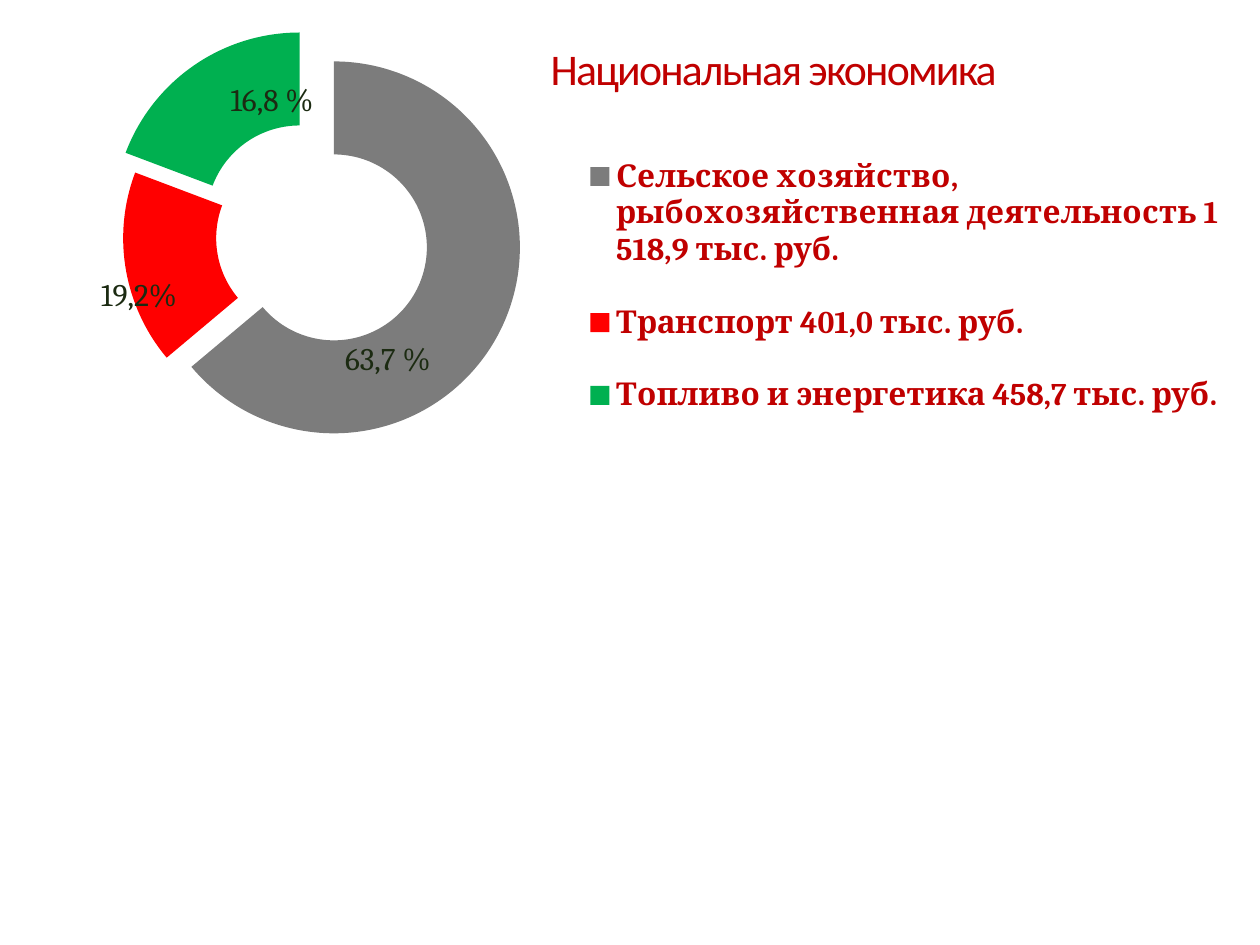
import pptx
import pptx.chart.data
import pptx.dml.color
import pptx.enum.chart
import pptx.enum.text
import pptx.util
from lxml import etree
from pptx.util import Inches

FONT = "Cambria"
TITLE_COLOR = "C00000"
LABEL_COLOR = "1C2B12"
CHART_SPACE = "{http://schemas.openxmlformats.org/drawingml/2006/chart}"

# category, share, slice colour, explosion, label text, label shift as part of chart size
SECTORS = [
    ("Сельское хозяйство, рыбохозяйственная деятельность 1 518,9 тыс. руб.",
     0.637, "7C7C7C", 25, "63,7 %", (-0.06, 0.11)),
    ("Транспорт 401,0 тыс. руб.", 0.168, "FF0000", 4, "19,2%", (-0.027, 0.07)),
    ("Топливо и энергетика 458,7 тыс. руб.", 0.192, "00B050", 25, "16,8 %", (0.043, -0.006)),
]


def rgb(value):
    return pptx.dml.color.RGBColor.from_string(value)


def manual_layout(**values):
    """Build a c:layout element whose children hold the given values."""
    layout = etree.Element(CHART_SPACE + "layout")
    manual = etree.SubElement(layout, CHART_SPACE + "manualLayout")
    for name, value in values.items():
        etree.SubElement(manual, CHART_SPACE + name).set("val", str(value))
    return layout


deck = pptx.Presentation()
deck.slide_width, deck.slide_height = Inches(10), Inches(7.5)
page = deck.slides.add_slide(deck.slide_layouts[5])

# Title
title = page.shapes.title
title.left, title.top = Inches(4.27), Inches(0.13)
title.width, title.height = Inches(5.53), Inches(0.67)
title.text_frame.vertical_anchor = pptx.enum.text.MSO_ANCHOR.BOTTOM
para = title.text_frame.paragraphs[0]
para.alignment = pptx.enum.text.PP_ALIGN.LEFT
para.line_spacing = 0.9
span = para.add_run()
span.text = "Национальная экономика"
for name, value in {"size": pptx.util.Pt(25), "name": "Calibri"}.items():
    setattr(span.font, name, value)
span.font.color.rgb = rgb(TITLE_COLOR)
span.font._element.set("spc", "-100")

# Doughnut chart
data = pptx.chart.data.CategoryChartData(number_format="0.0%")
data.categories = [sector[0] for sector in SECTORS]
data.add_series("Series 1", [sector[1] for sector in SECTORS])
chart = page.shapes.add_chart(
    pptx.enum.chart.XL_CHART_TYPE.DOUGHNUT,
    Inches(0.43), Inches(0.02), Inches(9.57), Inches(3.88), data).chart
chart.has_title = False
chart.has_legend = True
legend = chart.legend
legend.position = pptx.enum.chart.XL_LEGEND_POSITION.RIGHT
legend.include_in_layout = False
for font, color, bold in ((chart.font, LABEL_COLOR, False), (legend.font, TITLE_COLOR, True)):
    for name, value in {"name": FONT, "size": pptx.util.Pt(18), "bold": bold}.items():
        setattr(font, name, value)
    font.color.rgb = rgb(color)

# Places of the plot and the legend
plot = chart.plots[0]
plot.vary_by_categories = True
plot_area = plot._element.getparent()
for old in plot_area.xpath("c:layout"):
    plot_area.remove(old)
plot_area.insert(0, manual_layout(
    layoutTarget="inner", xMode="edge", yMode="edge", x=0.041, y=0.053, w=0.347, h=0.856))
for old in legend._element.xpath("c:layout"):
    legend._element.remove(old)
legend._element.xpath("c:legendPos")[0].addnext(manual_layout(
    xMode="edge", yMode="edge", x=0.435, y=0.245, w=0.54, h=0.67))
plot._element.xpath("c:holeSize")[0].set("val", "60")

# Slices and their labels
series = plot.series[0]
label_format = {"show_value": True, "show_percentage": False,
                "number_format": "0.0%", "number_format_is_linked": False}
for name, value in label_format.items():
    setattr(series.data_labels, name, value)
for index, (_, _, color, pull, text, (shift_x, shift_y)) in enumerate(SECTORS):
    point = series.points[index]
    point.format.fill.solid()
    point.format.fill.fore_color.rgb = rgb(color)
    explosion = etree.Element(CHART_SPACE + "explosion", val=str(pull))
    series._element.xpath(f"c:dPt[c:idx/@val='{index}']/c:spPr")[0].addprevious(explosion)
    span = point.data_label.text_frame.paragraphs[0].add_run()
    span.text = text
    for name, value in {"name": FONT, "size": pptx.util.Pt(18), "bold": False}.items():
        setattr(span.font, name, value)
    span.font.color.rgb = rgb(LABEL_COLOR)
    label_xml = series._element.xpath(f"c:dLbls/c:dLbl[c:idx/@val='{index}']")[0]
    label_xml.xpath("c:idx")[0].addnext(manual_layout(x=shift_x, y=shift_y))

# Default pull of the whole ring
explosion = etree.Element(CHART_SPACE + "explosion", val="25")
series._element.xpath("c:dPt")[0].addprevious(explosion)

deck.save("out.pptx")
